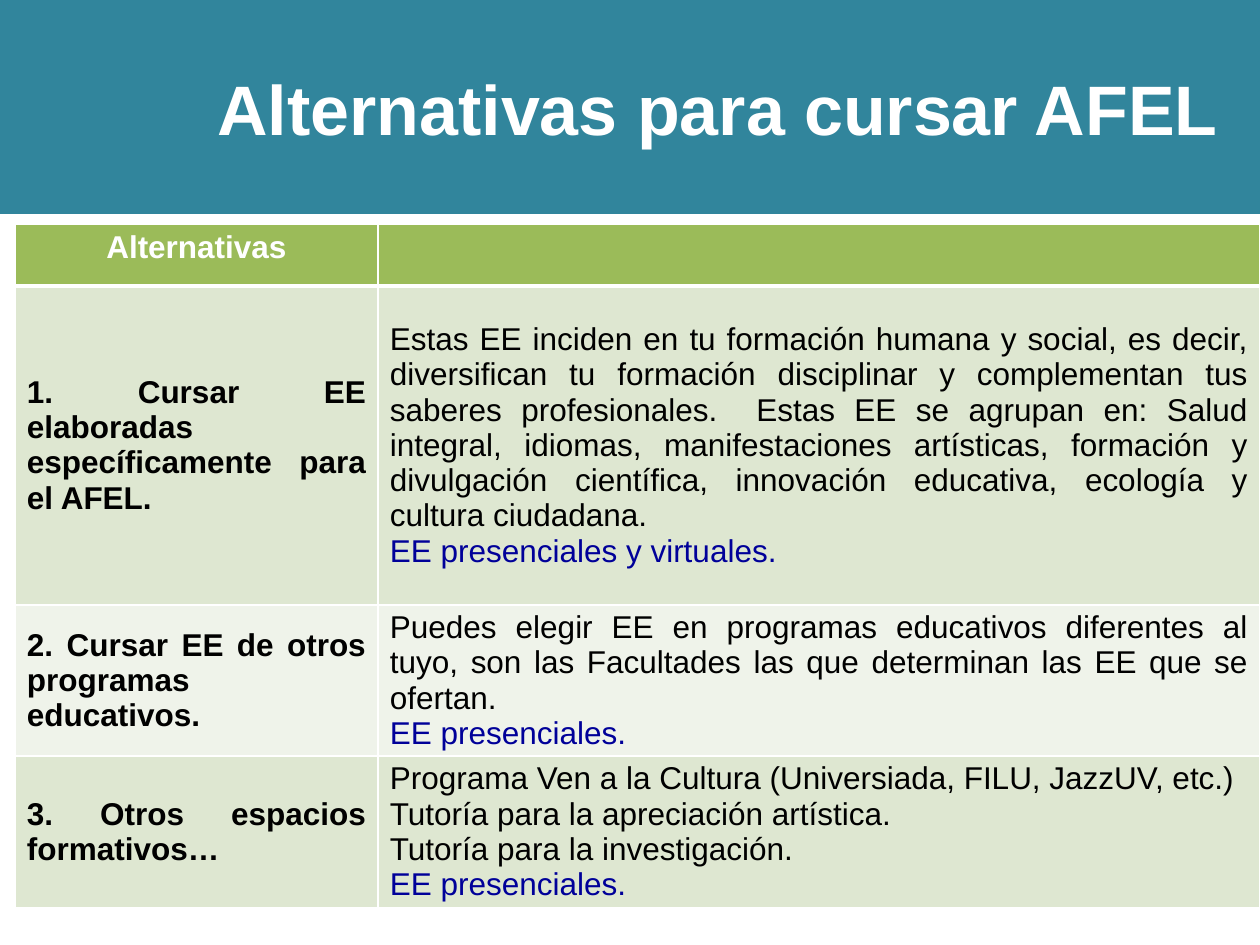
import pptx
import pptx.dml.color
import pptx.enum.shapes
import pptx.enum.text
import pptx.oxml
import pptx.oxml.ns
import pptx.util
from dataclasses import dataclass

PX = 914400 // 126
ALIGN = pptx.enum.text.PP_ALIGN
MID = pptx.enum.text.MSO_ANCHOR.MIDDLE
TOP = pptx.enum.text.MSO_ANCHOR.TOP


@dataclass(frozen=True)
class Theme:
    font: str = "Arial"
    teal: str = "31859C"
    green: str = "9BBB59"
    bands: tuple = ("DEE7D1", "EFF3EA")
    white: str = "FFFFFF"
    ink: str = "000000"
    blue: str = "000099"
    title: int = 40
    body: int = 18
    thin: int = 1
    thick: int = 3


LOOK = Theme()
COLS = (363, 882)
ROWS = (62, 319, 137, 137)

# Each option: its name, its details, and the mode of study
ITEMS = (
    ("1. Cursar EE elaboradas específicamente para el AFEL.",
     ("Estas EE inciden en tu formación humana y social, es decir, "
      "diversifican tu formación disciplinar y complementan tus saberes "
      "profesionales.  Estas EE se agrupan en: Salud integral, idiomas, "
      "manifestaciones artísticas, formación y divulgación científica, "
      "innovación educativa, ecología y cultura ciudadana.",),
     "EE presenciales y virtuales."),
    ("2. Cursar EE de otros programas educativos.",
     ("Puedes elegir EE en programas educativos diferentes al tuyo, son las "
      "Facultades las que determinan las EE que se ofertan.",),
     "EE presenciales."),
    ("3. Otros espacios formativos…",
     ("Programa Ven a la Cultura (Universiada, FILU, JazzUV, etc.)",
      "Tutoría para la apreciación artística.",
      "Tutoría para la investigación."),
     "EE presenciales."),
)


def color(code):
    return pptx.dml.color.RGBColor.from_string(code)


def box(*sides):
    return [side * PX for side in sides]


def write(frame, lines, align, size=LOOK.body, bold=False):
    """Write (text, colour) pairs, one paragraph each."""
    frame.word_wrap = True
    for i, (text, tint) in enumerate(lines):
        para = frame.add_paragraph() if i else frame.paragraphs[0]
        para.text = text
        para.alignment = align
        for run in para.runs:
            run.font.name = LOOK.font
            run.font.size = pptx.util.Pt(size)
            run.font.bold = bold
            run.font.color.rgb = color(tint)


def band(slide):
    shape = slide.shapes.add_shape(
        pptx.enum.shapes.MSO_SHAPE.RECTANGLE, *box(0, 0, 1260, 214))
    shape.shadow.inherit = False
    shape.fill.solid()
    shape.fill.fore_color.rgb = color(LOOK.teal)
    shape.line.fill.background()


def title(slide, text):
    frame = slide.shapes.add_textbox(*box(158, 29, 1072, 157)).text_frame
    frame.vertical_anchor = MID
    write(frame, [(text, LOOK.white)], ALIGN.RIGHT, LOOK.title, True)


def edge(cell, side, width):
    line = pptx.oxml.parse_xml(
        f'<a:ln{side} {pptx.oxml.ns.nsdecls("a")} w="{pptx.util.Pt(width)}">'
        f'<a:solidFill><a:srgbClr val="{LOOK.white}"/></a:solidFill>'
        f'</a:ln{side}>')
    cell._tc.get_or_add_tcPr().append(line)


def style(cell, fill, top, foot, pad=6, anchor=MID):
    for side, width in zip("LRTB", (LOOK.thin, LOOK.thin, top, foot)):
        edge(cell, side, width)
    cell.fill.solid()
    cell.fill.fore_color.rgb = color(fill)
    cell.margin_left = cell.margin_right = 12 * PX
    cell.margin_top = cell.margin_bottom = pad * PX
    cell.vertical_anchor = anchor


def grid(slide):
    table = slide.shapes.add_table(
        len(ROWS), len(COLS), *box(15, 224, sum(COLS), sum(ROWS))).table
    for col, width in zip(table.columns, COLS):
        col.width = width * PX
    for row, height in zip(table.rows, ROWS):
        row.height = height * PX

    # Header row
    for cell in table.rows[0].cells:
        style(cell, LOOK.green, LOOK.thin, LOOK.thick, anchor=TOP)
    write(table.cell(0, 0).text_frame, [("Alternativas", LOOK.white)],
          ALIGN.CENTER, bold=True)

    # Banded option rows
    for i, (name, facts, mode) in enumerate(ITEMS):
        left, right = table.rows[i + 1].cells
        fill = LOOK.bands[i % 2]
        top = LOOK.thin if i else LOOK.thick
        style(left, fill, top, LOOK.thin)
        style(right, fill, top, LOOK.thin, pad=0)
        write(left.text_frame, [(name, LOOK.ink)], ALIGN.JUSTIFY, bold=True)
        lines = [(fact, LOOK.ink) for fact in facts] + [(mode, LOOK.blue)]
        write(right.text_frame, lines, ALIGN.JUSTIFY)


def main():
    deck = pptx.Presentation()
    deck.slide_width, deck.slide_height = box(1260, 945)
    slide = deck.slides.add_slide(deck.slide_layouts[6])
    band(slide)
    title(slide, "Alternativas para cursar AFEL")
    grid(slide)
    deck.save("out.pptx")


if __name__ == "__main__":
    main()
